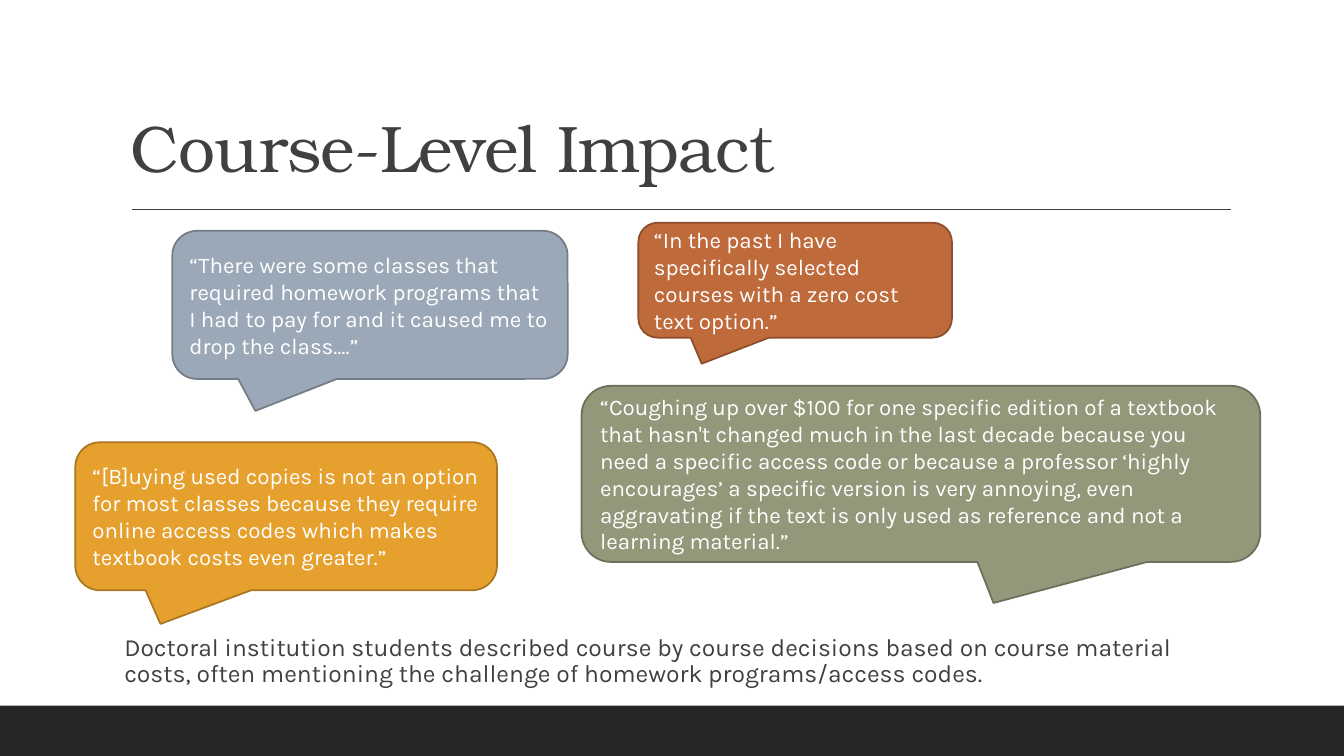
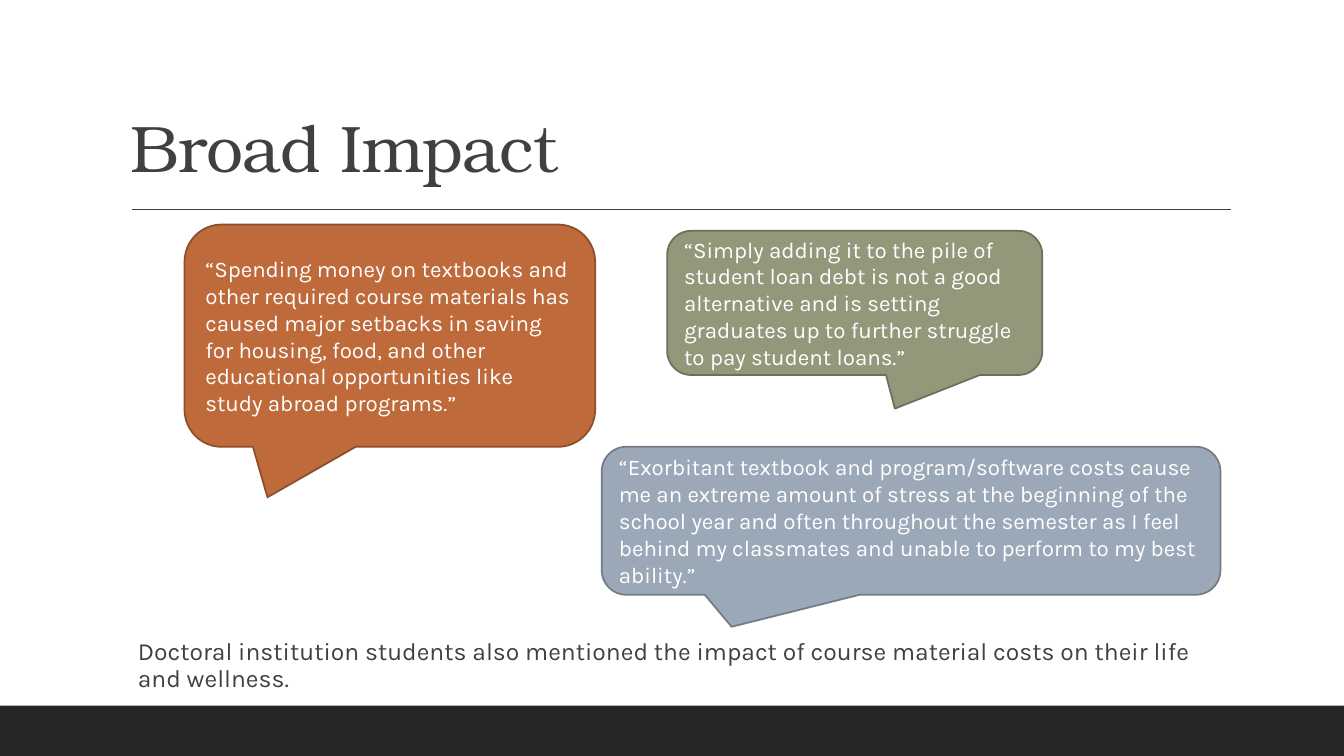
from dataclasses import dataclass

from lxml import etree
from pptx import Presentation
from pptx.dml.color import RGBColor
from pptx.enum.shapes import MSO_CONNECTOR, MSO_SHAPE
from pptx.enum.text import MSO_ANCHOR, PP_ALIGN
from pptx.oxml.ns import qn
from pptx.util import Pt

RECTANGLE = MSO_SHAPE.RECTANGLE
CALLOUT = MSO_SHAPE.ROUNDED_RECTANGULAR_CALLOUT
STRAIGHT = MSO_CONNECTOR.STRAIGHT
TOP, MIDDLE, BOTTOM = MSO_ANCHOR.TOP, MSO_ANCHOR.MIDDLE, MSO_ANCHOR.BOTTOM
LEFT = PP_ALIGN.LEFT


@dataclass(frozen=True)
class Theme:
    ink: str = "404040"
    band: str = "262626"
    white: str = "FFFFFF"
    title_font: str = "TeX Gyre Bonum"
    body_font: str = "Karla"
    title_size: float = 47
    body_size: float = 17.6
    quote_size: float = 16
    rule_width: float = 1
    outline_width: float = 1.25


@dataclass(frozen=True)
class Bubble:
    """Look of a callout; the tip is measured from its centre in shares of its size."""
    fill: str
    outline: str
    tip_x: float
    tip_y: float


@dataclass(frozen=True)
class Frame:
    left: float
    top: float
    width: float
    height: float

    def lengths(self):
        return Pt(self.left), Pt(self.top), Pt(self.width), Pt(self.height)


@dataclass(frozen=True)
class Quote:
    bubble: Bubble
    frame: Frame
    text: str


@dataclass(frozen=True)
class QuotePage:
    title: str
    summary: str
    summary_frame: Frame
    quotes: tuple[Quote, ...]


THEME = Theme()
BLUE = Bubble("9BA8B7", "737C87", -0.29, 0.716)
RUST = Bubble("BF6A3B", "8D4E2C", -0.298, 0.727)
GREEN = Bubble("92987A", "6C705A", 0.107, 0.733)
AMBER = Bubble("E6A02E", "AA7622", -0.298, 0.727)
CORNER = 0.167

DECK_WIDTH, DECK_HEIGHT = 960, 540
BAND_FRAME = Frame(0, 504, DECK_WIDTH, 36)
TITLE_FRAME = Frame(86.4, 22.3, 792, 114.5)
RULE_LEFT, RULE_RIGHT, RULE_TOP = 94.3, 879.1, 149.5

PAGES = (
    QuotePage(
        "Course-Level Impact",
        "Doctoral institution students described course by course decisions based on course "
        "material costs, often mentioning the challenge of homework programs/access codes.",
        Frame(81.7, 450, 792, 46.8),
        (
            Quote(BLUE, Frame(123.1, 164.9, 282.4, 105.8),
                  "“There were some classes that required homework programs that I had to pay "
                  "for and it caused me to drop the class….”"),
            Quote(RUST, Frame(456, 159.1, 224, 82.1),
                  "“In the past I have specifically selected courses with a zero cost text "
                  "option.”"),
            Quote(GREEN, Frame(415.4, 275.6, 484.8, 125.8),
                  "“Coughing up over $100 for one specific edition of a textbook that hasn't "
                  "changed much in the last decade because you need a specific access code or "
                  "because a professor ‘highly encourages’ a specific version is very annoying, "
                  "even aggravating if the text is only used as reference and not a learning "
                  "material.”"),
            Quote(AMBER, Frame(53.8, 315.9, 301.2, 105.8),
                  "“[B]uying used copies is not an option for most classes because they require "
                  "online access codes which makes textbook costs even greater.”"),
        ),
    ),
    QuotePage(
        "Broad Impact",
        "Doctoral institution students also mentioned the impact of course material costs on "
        "their life and wellness.",
        Frame(91.4, 453.2, 792, 46.8),
        (
            Quote(BLUE, Frame(429.8, 319.1, 442, 105.8),
                  "“Exorbitant textbook and program/software costs cause me an extreme amount "
                  "of stress at the beginning of the school year and often throughout the "
                  "semester as I feel behind my classmates and unable to perform to my best "
                  "ability.”"),
            Quote(RUST, Frame(131.8, 160.4, 293.3, 158.8),
                  "“Spending money on textbooks and other required course materials has caused "
                  "major setbacks in saving for housing, food, and other educational "
                  "opportunities like study abroad programs.”"),
            Quote(GREEN, Frame(476.6, 164.9, 268, 103),
                  "“Simply adding it to the pile of student loan debt is not a good alternative "
                  "and is setting graduates up to further struggle to pay student loans.”"),
        ),
    ),
)


def color(code: str) -> RGBColor:
    return RGBColor.from_string(code)


def write(box, text: str, *, font: str, size: float, ink: str, anchor=TOP,
          line_spacing: float = 1, tracking: float = 0, side_insets=(7.2, 7.2)) -> None:
    frame = box.text_frame
    frame.word_wrap = True
    frame.vertical_anchor = anchor
    frame.margin_left, frame.margin_right = map(Pt, side_insets)
    para = frame.paragraphs[0]
    para.alignment = LEFT
    para.line_spacing = line_spacing
    span = para.add_run()
    span.text = text
    span.font.name = font
    span.font.size = Pt(size)
    span.font.color.rgb = color(ink)
    if tracking:
        span.font._element.set("spc", str(round(tracking * 100)))


def add_filled(page, kind, frame: Frame, fill: str):
    shape = page.shapes.add_shape(kind, *frame.lengths())
    shape.shadow.inherit = False
    shape.fill.solid()
    shape.fill.fore_color.rgb = color(fill)
    return shape


def add_rule(page) -> None:
    rule = page.shapes.add_connector(
        STRAIGHT, Pt(RULE_LEFT), Pt(RULE_TOP), Pt(RULE_RIGHT), Pt(RULE_TOP))
    rule.line.color.rgb = color(THEME.ink)
    rule.line.width = Pt(THEME.rule_width)
    etree.SubElement(rule.element.spPr, qn("a:effectLst"))


def add_quote(page, quote: Quote) -> None:
    bubble = quote.bubble
    shape = add_filled(page, CALLOUT, quote.frame, bubble.fill)
    shape.line.color.rgb = color(bubble.outline)
    shape.line.width = Pt(THEME.outline_width)
    for index, value in enumerate((bubble.tip_x, bubble.tip_y, CORNER)):
        shape.adjustments[index] = value
    write(shape, quote.text, font=THEME.body_font, size=THEME.quote_size,
          ink=THEME.white, anchor=MIDDLE)


def add_page(deck, content: QuotePage) -> None:
    page = deck.slides.add_slide(deck.slide_layouts[6])
    band = add_filled(page, RECTANGLE, BAND_FRAME, THEME.band)
    band.line.fill.background()
    add_rule(page)
    title = page.shapes.add_textbox(*TITLE_FRAME.lengths())
    write(title, content.title, font=THEME.title_font, size=THEME.title_size,
          ink=THEME.ink, anchor=BOTTOM, line_spacing=0.9, tracking=-0.5)
    summary = page.shapes.add_textbox(*content.summary_frame.lengths())
    write(summary, content.summary, font=THEME.body_font, size=THEME.body_size,
          ink=THEME.ink, line_spacing=0.9, side_insets=(7.2, 0))
    for quote in content.quotes:
        add_quote(page, quote)


def main() -> None:
    deck = Presentation()
    deck.slide_width, deck.slide_height = Pt(DECK_WIDTH), Pt(DECK_HEIGHT)
    for content in PAGES:
        add_page(deck, content)
    deck.save("out.pptx")


if __name__ == "__main__":
    main()
